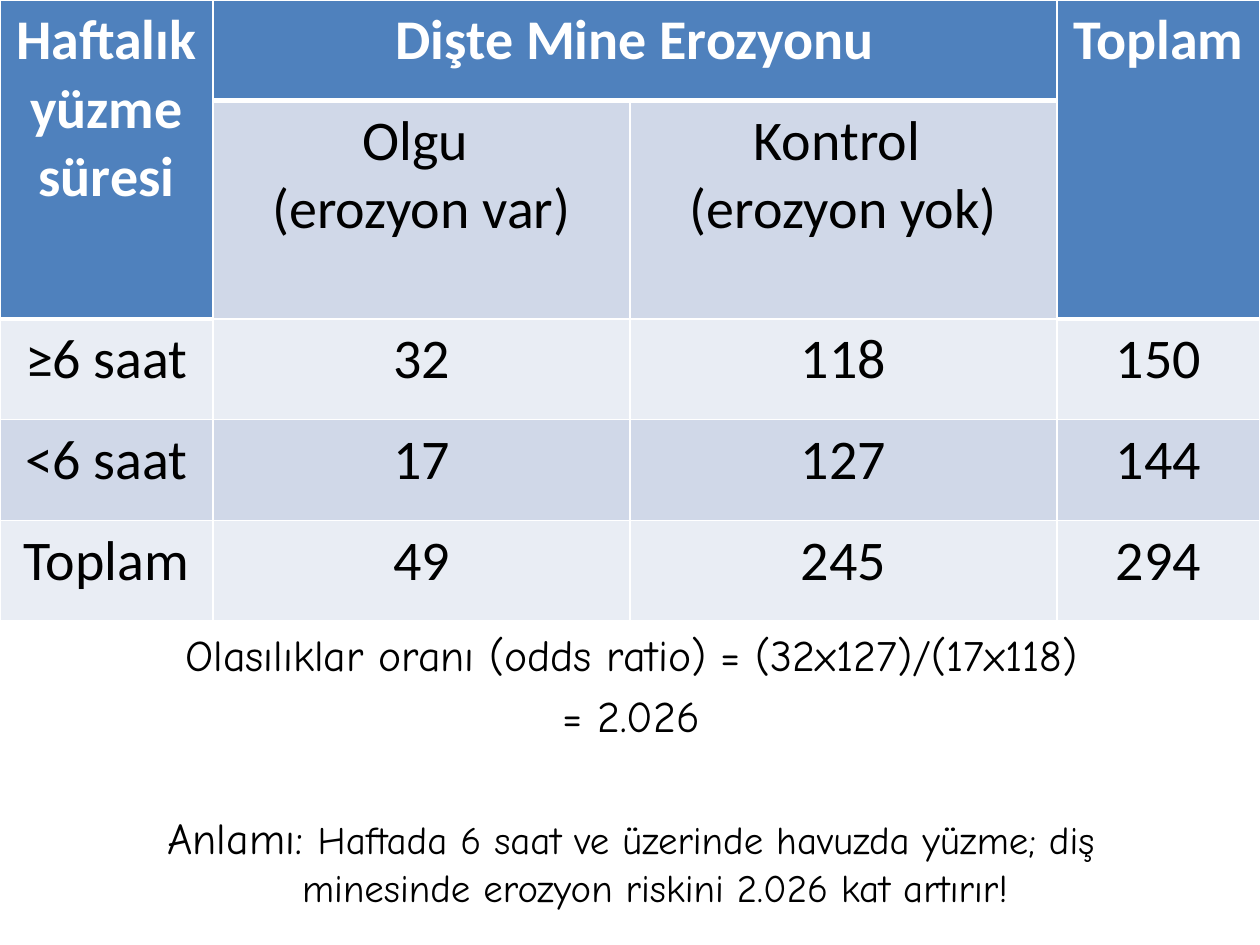
from typing import NamedTuple

from lxml import etree
from pptx import Presentation
from pptx.dml.color import RGBColor
from pptx.enum.text import MSO_ANCHOR, MSO_AUTO_SIZE, PP_ALIGN
from pptx.oxml.ns import qn
from pptx.util import Inches, Pt

CENTER = PP_ALIGN.CENTER
TOP = MSO_ANCHOR.TOP
NO_FIT = MSO_AUTO_SIZE.NONE

WHITE, BLACK = "FFFFFF", "000000"
BLUE, DARK, LIGHT = "4F81BD", "D0D8E8", "E9EDF4"
COLS = [1.69, 3.31, 3.39, 1.61]
ROWS = [0.8, 1.48, 0.8, 0.8, 0.8]


class Entry(NamedTuple):
    row: int
    col: int
    text: str
    high: int = 1
    wide: int = 1


class Line(NamedTuple):
    texts: list[tuple[str, float]]
    gap: float = 5


HEADS = [
    Entry(0, 0, "Haftalık yüzme süresi", high=2),
    Entry(0, 1, "Dişte Mine Erozyonu", wide=2),
    Entry(0, 3, "Toplam", high=2),
]
GROUPS = [
    Entry(1, 1, "Olgu \n(erozyon var)"),
    Entry(1, 2, "Kontrol \n(erozyon yok)"),
]
COUNTS = [
    ("≥6 saat", 32, 118, 150),
    ("<6 saat", 17, 127, 144),
    ("Toplam", 49, 245, 294),
]
NOTES = [
    Line([("Olasılıklar oranı (odds ratio) = (32x127)/(17x118)", 25)]),
    Line([("= 2.026", 25)]),
    Line([("Anlamı: ", 25),
          ("Haftada 6 saat ve üzerinde havuzda yüzme; diş minesinde "
           "erozyon riskini 2.026 kat artırır!", 22.2)], gap=40),
]


def color(code: str) -> RGBColor:
    return RGBColor.from_string(code)


def style(run, face: str, size: float, code: str, bold: bool = False) -> None:
    font = run.font
    font.name, font.size, font.bold = face, Pt(size), bold
    font.color.rgb = color(code)


def border(cell, top: float, base: float) -> None:
    props = cell._tc.get_or_add_tcPr()
    for side, width in (("L", 1), ("R", 1), ("T", top), ("B", base)):
        line = etree.SubElement(props, qn(f"a:ln{side}"), w=str(Pt(width)))
        fill = etree.SubElement(line, qn("a:solidFill"))
        etree.SubElement(fill, qn("a:srgbClr"), val=WHITE)


def is_head(row: int, col: int) -> bool:
    return row == 0 or (row == 1 and col in (0, 3))


def paint(grid, row: int, col: int) -> None:
    cell = grid.cell(row, col)
    head = is_head(row, col)
    under = row > 0 and not head and is_head(row - 1, col)
    border(cell, 3 if under else 1, 3 if head else 1)
    cell.fill.solid()
    cell.fill.fore_color.rgb = color(BLUE if head else DARK if row % 2 else LIGHT)


def put(grid, entry: Entry) -> None:
    row, col = entry.row, entry.col
    cell = grid.cell(row, col)
    if entry.high > 1 or entry.wide > 1:
        cell.merge(grid.cell(row + entry.high - 1, col + entry.wide - 1))
    cell.text_frame.text = entry.text
    head = is_head(row, col)
    for para in cell.text_frame.paragraphs:
        para.alignment = CENTER
        for run in para.runs:
            style(run, "Calibri", 32, WHITE if head else BLACK, head)


def add_grid(slide) -> None:
    grid = slide.shapes.add_table(
        len(ROWS), len(COLS), 0, 0, Inches(sum(COLS)), Inches(sum(ROWS))).table
    for col, width in zip(grid.columns, COLS):
        col.width = Inches(width)
    for row, height in zip(grid.rows, ROWS):
        row.height = Inches(height)
    for row in range(len(ROWS)):
        for col in range(len(COLS)):
            paint(grid, row, col)
    body = [Entry(row, col, str(value))
            for row, values in enumerate(COUNTS, 2)
            for col, value in enumerate(values)]
    for entry in HEADS + GROUPS + body:
        put(grid, entry)


def add_notes(shape) -> None:
    shape.left, shape.top = Inches(0.51), Inches(4.93)
    shape.width, shape.height = Inches(9), Inches(2.2)
    frame = shape.text_frame
    frame.word_wrap, frame.auto_size = True, NO_FIT
    frame.vertical_anchor = TOP
    for i, line in enumerate(NOTES):
        para = frame.add_paragraph() if i else frame.paragraphs[0]
        para.alignment, para.space_before = CENTER, Pt(line.gap)
        # Hanging indent without a bullet
        props = para._p.get_or_add_pPr()
        props.set("marL", str(Inches(0.38)))
        props.set("indent", str(Inches(-0.38)))
        etree.SubElement(props, qn("a:buNone"))
        for text, size in line.texts:
            run = para.add_run()
            run.text = text
            style(run, "Comic Neue", size, BLACK)


def main() -> None:
    deck = Presentation()
    deck.slide_width, deck.slide_height = Inches(10), Inches(7.5)
    # Title and content layout; this slide shows no title
    slide = deck.slides.add_slide(deck.slide_layouts[1])
    title = slide.shapes.title._element
    title.getparent().remove(title)

    # Odds ratio and its meaning
    add_notes(slide.placeholders[1])
    # Case and control counts
    add_grid(slide)
    deck.save("out.pptx")


if __name__ == "__main__":
    main()
